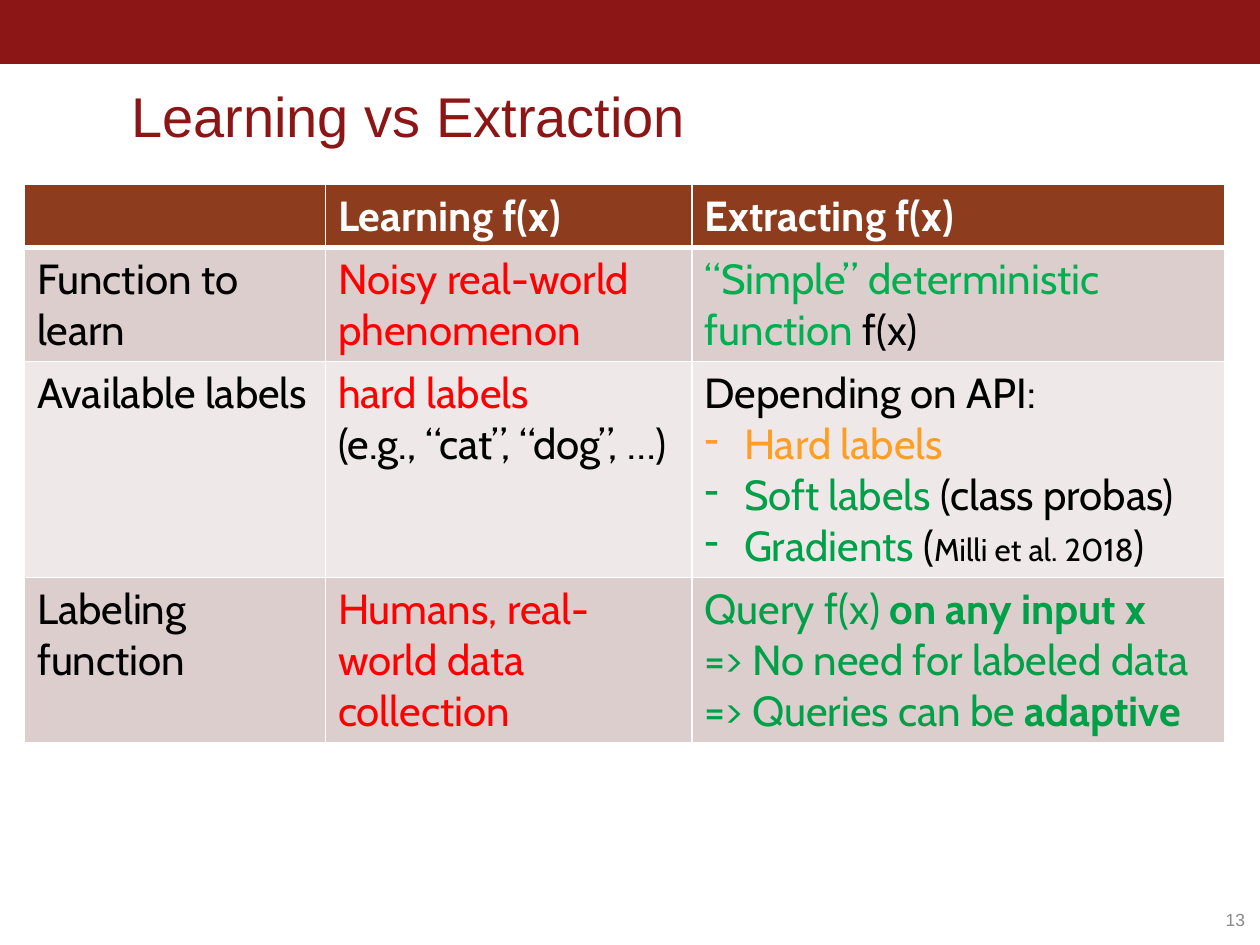
from lxml import etree
from pptx import Presentation
from pptx.dml.color import RGBColor
from pptx.enum import shapes, text
from pptx.oxml import ns
from pptx.util import Pt

CARDINAL = RGBColor(0x8C, 0x15, 0x15)
BROWN = RGBColor(0x8D, 0x3C, 0x1E)
ROSE = RGBColor(0xDB, 0xCE, 0xCD)
PALE = RGBColor(0xEE, 0xE8, 0xE8)
WHITE = RGBColor(0xFF, 0xFF, 0xFF)
BLACK = RGBColor(0, 0, 0)
RED = RGBColor(0xFF, 0, 0)
LIME = RGBColor(0, 0xB0, 0x50)
GREEN = RGBColor(0, 0xA0, 0x48)
ORANGE = RGBColor(0xFF, 0x9E, 0x26)
GRAY = RGBColor(0x89, 0x89, 0x89)

BREAK = None
BODY_SIZE = 24
CITE_SIZE = 18
BULLET = "-"

# A cell lists paragraphs; a paragraph lists runs: (words, colour, bold, size).
ROWS = [
    [[],
     [[("Learning f(x)", WHITE, True)]],
     [[("Extracting f(x)", WHITE, True)]]],
    [[[("Function to learn", BLACK)]],
     [[("Noisy real-world phenomenon", RED)]],
     [[("“Simple” deterministic function ", LIME), ("f(x)", BLACK)]]],
    [[[("Available labels", BLACK)]],
     [[("hard labels", RED), BREAK, ("(e.g., “cat”, “dog”, …)", BLACK)]],
     [[("Depending on API:", BLACK)],
      [BULLET, ("Hard labels", ORANGE)],
      [BULLET, ("Soft labels", GREEN), (" (class probas)", BLACK)],
      [BULLET, ("Gradients", GREEN), (" (", BLACK),
       ("Milli et al. 2018", BLACK, False, CITE_SIZE), (")", BLACK)]]],
    [[[("Labeling function", BLACK)]],
     [[("Humans, real-world data collection", RED)]],
     [[("Query f(x) ", GREEN), ("on any input x ", GREEN, True), BREAK,
       ("=> No need for labeled data", GREEN)],
      [("=> Queries can be ", GREEN), ("adaptive", GREEN, True)]]],
]
COLUMN_WIDTHS = [172, 209.5, 304.5]
ROW_HEIGHTS = [36, 65, 123.5, 94.5]
ROW_FILLS = [BROWN, ROSE, PALE, ROSE]


def add_span(para, words, color, bold=False, size=BODY_SIZE, face="Cabin"):
    span = para.add_run()
    span.text = words
    span.font.name = face
    span.font.size = Pt(size)
    span.font.bold = bold
    span.font.color.rgb = color


def add_bullet(para):
    props = para._p.get_or_add_pPr()
    props.set("marL", str(Pt(22.5)))
    props.set("indent", str(-Pt(22.5)))
    etree.SubElement(props, ns.qn("a:buChar")).set("char", BULLET)


def fill_paragraph(para, parts):
    for part in parts:
        if part is BREAK:
            para.add_line_break()
        elif part == BULLET:
            add_bullet(para)
        else:
            add_span(para, *part)


def add_borders(cell, bottom):
    props = cell._tc.get_or_add_tcPr()
    widths = {"lnL": 1, "lnR": 1, "lnT": 1, "lnB": bottom}
    for index, (tag, width) in enumerate(widths.items()):
        line = etree.Element(ns.qn("a:" + tag), w=str(Pt(width)))
        solid = etree.SubElement(line, ns.qn("a:solidFill"))
        etree.SubElement(solid, ns.qn("a:srgbClr")).set("val", str(WHITE))
        props.insert(index, line)


def add_label(page, place, words, color, size, anchor):
    box = page.shapes.add_textbox(*map(Pt, place))
    frame = box.text_frame
    frame.word_wrap = True
    frame.vertical_anchor = anchor
    para = frame.paragraphs[0]
    add_span(para, words, color, size=size, face="Arial")
    return frame, para


def add_comparison(page):
    table = page.shapes.add_table(
        len(ROWS), len(COLUMN_WIDTHS), Pt(14), Pt(105.5),
        Pt(sum(COLUMN_WIDTHS)), Pt(sum(ROW_HEIGHTS))).table
    for column, width in zip(table.columns, COLUMN_WIDTHS):
        column.width = Pt(width)
    for r, (row, height, fill) in enumerate(zip(ROWS, ROW_HEIGHTS, ROW_FILLS)):
        table.rows[r].height = Pt(height)
        for c, paragraphs in enumerate(row):
            cell = table.cell(r, c)
            cell.fill.solid()
            cell.fill.fore_color.rgb = fill
            add_borders(cell, 3 if r == 0 else 1)
            frame = cell.text_frame
            for index, parts in enumerate(paragraphs):
                para = frame.add_paragraph() if index else frame.paragraphs[0]
                fill_paragraph(para, parts)


def main():
    deck = Presentation()
    deck.slide_width, deck.slide_height = Pt(720), Pt(540)
    page = deck.slides.add_slide(deck.slide_layouts[6])

    band = page.shapes.add_shape(
        shapes.MSO_SHAPE.RECTANGLE, Pt(-0.5), Pt(0), Pt(720.5), Pt(36))
    band.shadow.inherit = False
    band.fill.solid()
    band.fill.fore_color.rgb = CARDINAL
    band.line.color.rgb = CARDINAL
    band.line.width = Pt(0.75)

    frame, para = add_label(page, (75, 37.5, 607, 51), "Learning vs Extraction",
                            CARDINAL, 32, text.MSO_ANCHOR.BOTTOM)
    frame.margin_left = Pt(0)
    para.line_spacing = 0.85

    add_comparison(page)

    frame, para = add_label(page, (651.5, 511, 67, 29), "13",
                            GRAY, 10, text.MSO_ANCHOR.MIDDLE)
    para.alignment = text.PP_ALIGN.RIGHT
    deck.save("out.pptx")


if __name__ == "__main__":
    main()
